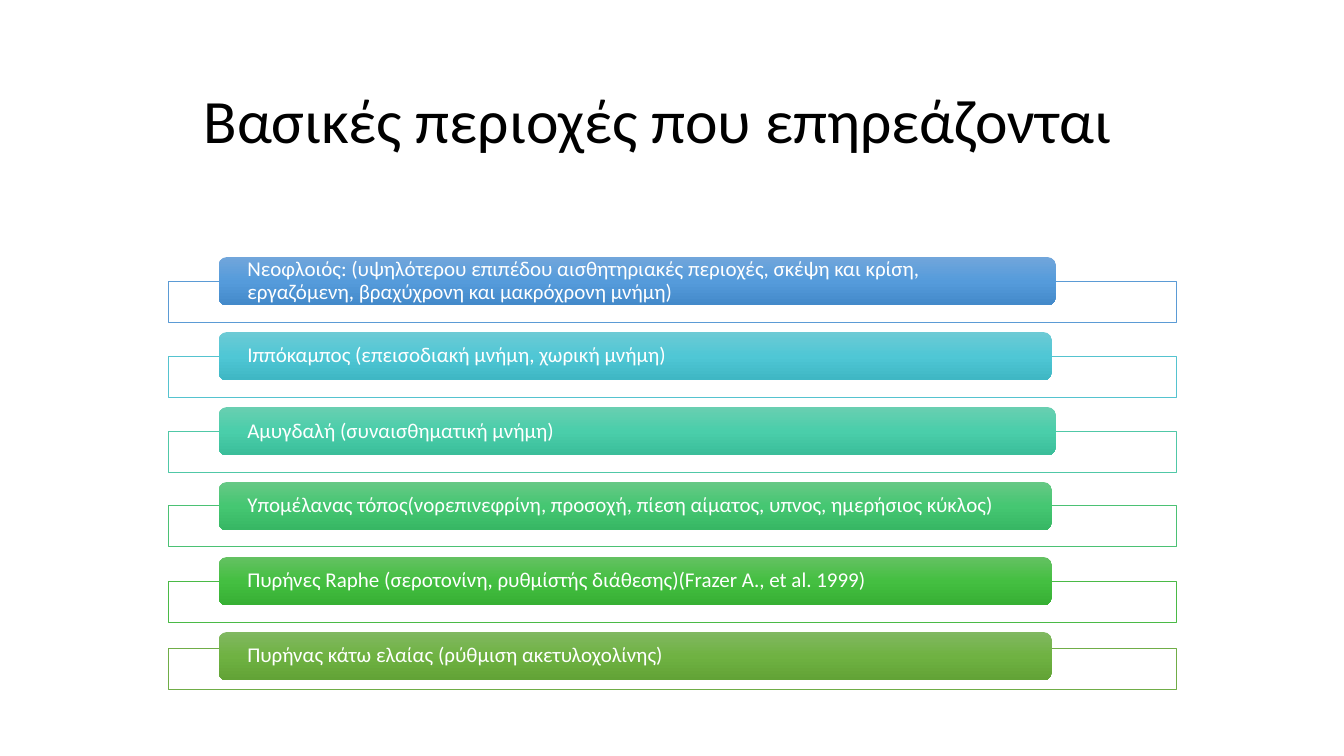
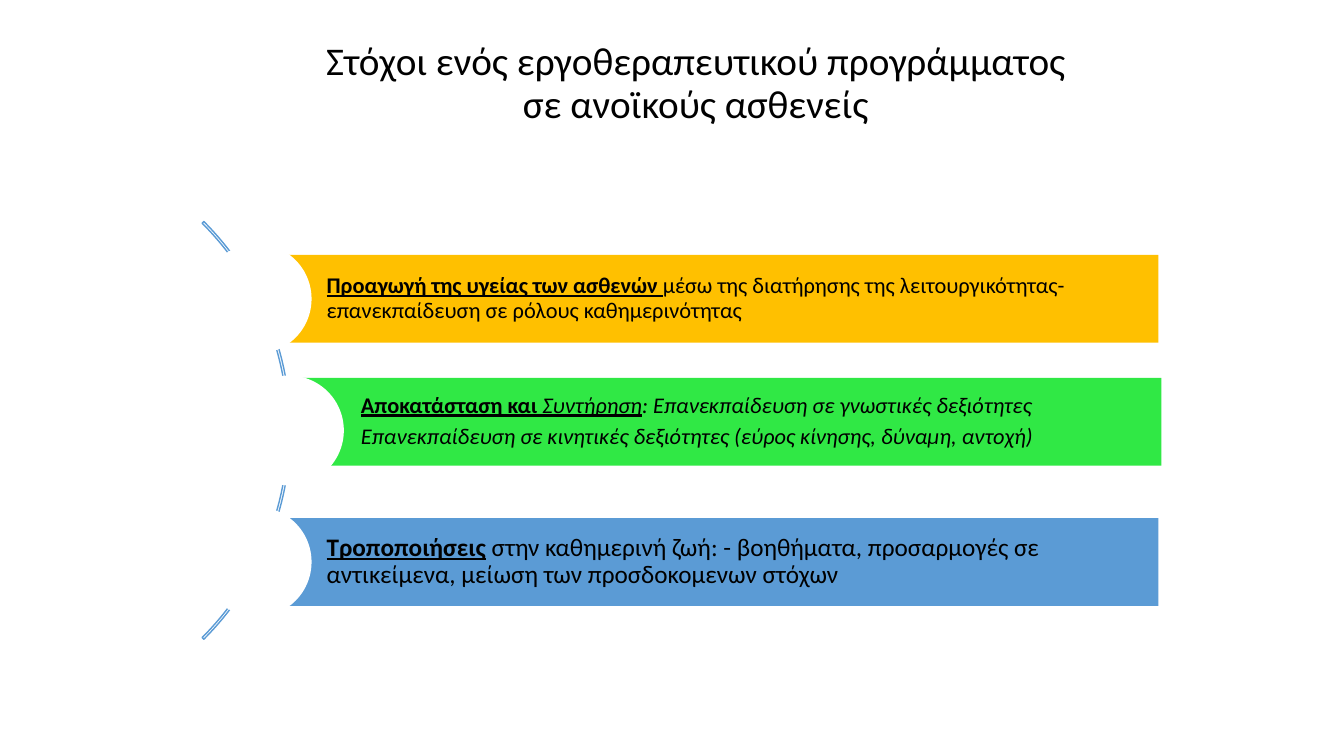
from copy import deepcopy
from dataclasses import dataclass
from typing import NamedTuple

from pptx import Presentation
from pptx.dml.color import RGBColor
from pptx.enum.shapes import MSO_SHAPE
from pptx.enum.text import MSO_ANCHOR, MSO_AUTO_SIZE, PP_ALIGN
from pptx.shapes.autoshape import Shape
from pptx.slide import Slide
from pptx.util import Inches, Pt

RECT, ROUND = MSO_SHAPE.RECTANGLE, MSO_SHAPE.ROUNDED_RECTANGLE
OVAL, ARC = MSO_SHAPE.OVAL, MSO_SHAPE.BLOCK_ARC
MIDDLE = MSO_ANCHOR.MIDDLE
LEFT, CENTER = PP_ALIGN.LEFT, PP_ALIGN.CENTER
FIXED = MSO_AUTO_SIZE.NONE

FONT = "Calibri"
HUES = {
    "white": "FFFFFF",
    "black": "000000",
    "blue": "5B9BD5",
    "cyan": "55C3CF",
    "teal": "50C8A7",
    "mint": "4BC174",
    "green": "4ABA46",
    "olive": "70AD47",
    "gold": "FFC000",
    "lime": "30E845",
}
# Top, middle and bottom of each shaded bar
SHADES = {
    "blue": ("71A6DB", "559BDB", "448ACA"),
    "cyan": ("6DCAD5", "4FC7D5", "3FB7C4"),
    "teal": ("69CFB1", "4ACEAA", "3BBE9A"),
    "mint": ("66C885", "45C772", "37B764"),
    "green": ("64C162", "44BF41", "37B034"),
    "olive": ("81B861", "6FB242", "62A336"),
}


class Box(NamedTuple):
    left: float
    top: float
    width: float
    height: float


class Span(NamedTuple):
    text: str
    bold: bool = False
    italic: bool = False
    under: bool = False


@dataclass
class Region:
    text: str
    hue: str
    width: float = 8.26
    drop: float = 0.24  # from the top of the bar to the top of its frame


@dataclass
class Goal:
    paras: list[list[Span]]
    hue: str
    box: Box
    dot: float  # left of the white circle
    size: int = 16
    pad: float = 0.04


REGIONS = [
    Region("Νεοφλοιός: (υψηλότερου επιπέδου αισθητηριακές περιοχές, σκέψη και "
           "κρίση, εργαζόμενη, βραχύχρονη και μακρόχρονη μνήμη)", "blue", 8.3),
    Region("Ιππόκαμπος (επεισοδιακή μνήμη, χωρική μνήμη)", "cyan"),
    Region("Αμυγδαλή (συναισθηματική μνήμη)", "teal", 8.3),
    Region("Υπομέλανας τόπος(νορεπινεφρίνη, προσοχή, πίεση αίματος, υπνος, "
           "ημερήσιος κύκλος)", "mint", drop=0.23),
    Region("Πυρήνες Raphe (σεροτονίνη, ρυθμίστής διάθεσης)"
           "(Frazer A., et al. 1999)", "green"),
    Region("Πυρήνας κάτω ελαίας (ρύθμιση ακετυλοχολίνης)", "olive", drop=0.16),
]

GOALS = [
    Goal([[Span("Προαγωγή της υγείας των ασθενών ", bold=True, under=True),
           Span("μέσω της διατήρησης της λειτουργικότητας- επανεκπαίδευση σε "
                "ρόλους καθημερινότητας")]],
         "gold", Box(2.55, 2.53, 8.94, 0.87), 2),
    Goal([[Span("Αποκατάσταση και ", bold=True, under=True),
           Span("Συντήρηση", italic=True, under=True),
           Span(": Επανεκπαίδευση σε γνωστικές δεξιότητες", italic=True)],
          [Span("Επανεκπαίδευση σε κινητικές δεξιότητες (εύρος κίνησης, "
                "δύναμη, αντοχή)", italic=True)]],
         "lime", Box(2.89, 3.75, 8.63, 0.87), 2.32),
    Goal([[Span("Τροποποιήσεις", bold=True, under=True),
           Span(" στην καθημερινή ζωή: - βοηθήματα, προσαρμογές σε "
                "αντικείμενα, μείωση των προσδοκομενων στόχων")]],
         "blue", Box(2.55, 5.14, 8.94, 0.87), 2, size=18, pad=0.05),
]


def color(hue: str) -> RGBColor:
    return RGBColor.from_string(HUES[hue])


def draw(slide: Slide, kind: MSO_SHAPE, box: Box, fill: str | None = None,
         line: str | None = None, weight: float = 0.5) -> Shape:
    shape = slide.shapes.add_shape(kind, *map(Inches, box))
    shape.shadow.inherit = False
    if fill:
        shape.fill.solid()
        shape.fill.fore_color.rgb = color(fill)
    else:
        shape.fill.background()
    if line:
        shape.line.color.rgb = color(line)
        shape.line.width = Pt(weight)
    else:
        shape.line.fill.background()
    return shape


def shade(shape: Shape, tones: tuple[str, str, str]) -> None:
    """Fill from top to bottom with three even gradient stops."""
    fill = shape.fill
    fill.gradient()
    fill.gradient_angle = 270
    first = fill._fill._gradFill.gsLst[0]
    first.addnext(deepcopy(first))
    for i, (stop, tone) in enumerate(zip(fill.gradient_stops, tones)):
        stop.position = i / 2
        stop.color.rgb = RGBColor.from_string(tone)


def write(shape: Shape, paras: list[list[Span]], size: int, hue: str,
          align: PP_ALIGN = LEFT) -> None:
    frame = shape.text_frame
    frame.word_wrap = True
    frame.auto_size = FIXED
    frame.vertical_anchor = MIDDLE
    for i, spans in enumerate(paras):
        para = frame.add_paragraph() if i else frame.paragraphs[0]
        para.alignment = align
        para.line_spacing = 0.9
        if i:
            para.space_before = Pt(5.5)
        for span in spans:
            run = para.add_run()
            run.text = span.text
            font = run.font
            font.name, font.size = FONT, Pt(size)
            font.color.rgb = color(hue)
            font.bold, font.italic = span.bold, span.italic
            font.underline = span.under


def inset(shape: Shape, left: float, top: float, right: float) -> None:
    frame = shape.text_frame
    frame.margin_left, frame.margin_right = Inches(left), Inches(right)
    frame.margin_top = frame.margin_bottom = Inches(top)


def start(deck: Presentation, text: str, box: Box, size: int) -> Slide:
    """Add a slide with its title."""
    slide = deck.slides.add_slide(deck.slide_layouts[5])
    title = slide.shapes.title
    title.left, title.top, title.width, title.height = map(Inches, box)
    write(title, [[Span(text)]], size, "black", CENTER)
    return slide


def regions(deck: Presentation) -> None:
    slide = start(deck, "Βασικές περιοχές που επηρεάζονται",
                  Box(1.67, 0.6, 9.72, 1.25), 44)
    step = (6.27 - 2.55) / (len(REGIONS) - 1)
    for i, item in enumerate(REGIONS):
        top = 2.55 + i * step
        draw(slide, RECT, Box(1.67, top + item.drop, 10, 0.41),
             "white", item.hue)
        bar = draw(slide, ROUND, Box(2.17, top, item.width, 0.48))
        shade(bar, SHADES[item.hue])
        inset(bar, 0.26, 0, 0.26)
        write(bar, [[Span(item.text)]], 15, "white")


def goals(deck: Presentation) -> None:
    slide = start(deck, "Στόχοι ενός εργοθεραπευτικού προγράμματος "
                  "σε ανοϊκούς ασθενείς", Box(3.04, 0.21, 7.72, 1.25), 28)
    arc = draw(slide, ARC, Box(-2.98, 1.34, 5.86, 5.86), line="blue", weight=1)
    # Angles in units of 100000/60000 degrees: from 315 to 45 degrees
    for i, value in enumerate((189, 27, 0.004)):
        arc.adjustments[i] = value
    step = (5.03 - 2.42) / (len(GOALS) - 1)
    for i, goal in enumerate(GOALS):
        bar = draw(slide, RECT, goal.box, goal.hue)
        inset(bar, 0.69, goal.pad, goal.pad)
        write(bar, goal.paras, goal.size, "black")
        draw(slide, OVAL, Box(goal.dot, 2.42 + i * step, 1.09, 1.09), "white")


def main() -> None:
    deck = Presentation()
    deck.slide_width, deck.slide_height = Inches(13.33), Inches(7.5)
    regions(deck)
    goals(deck)
    deck.save("out.pptx")


if __name__ == "__main__":
    main()
